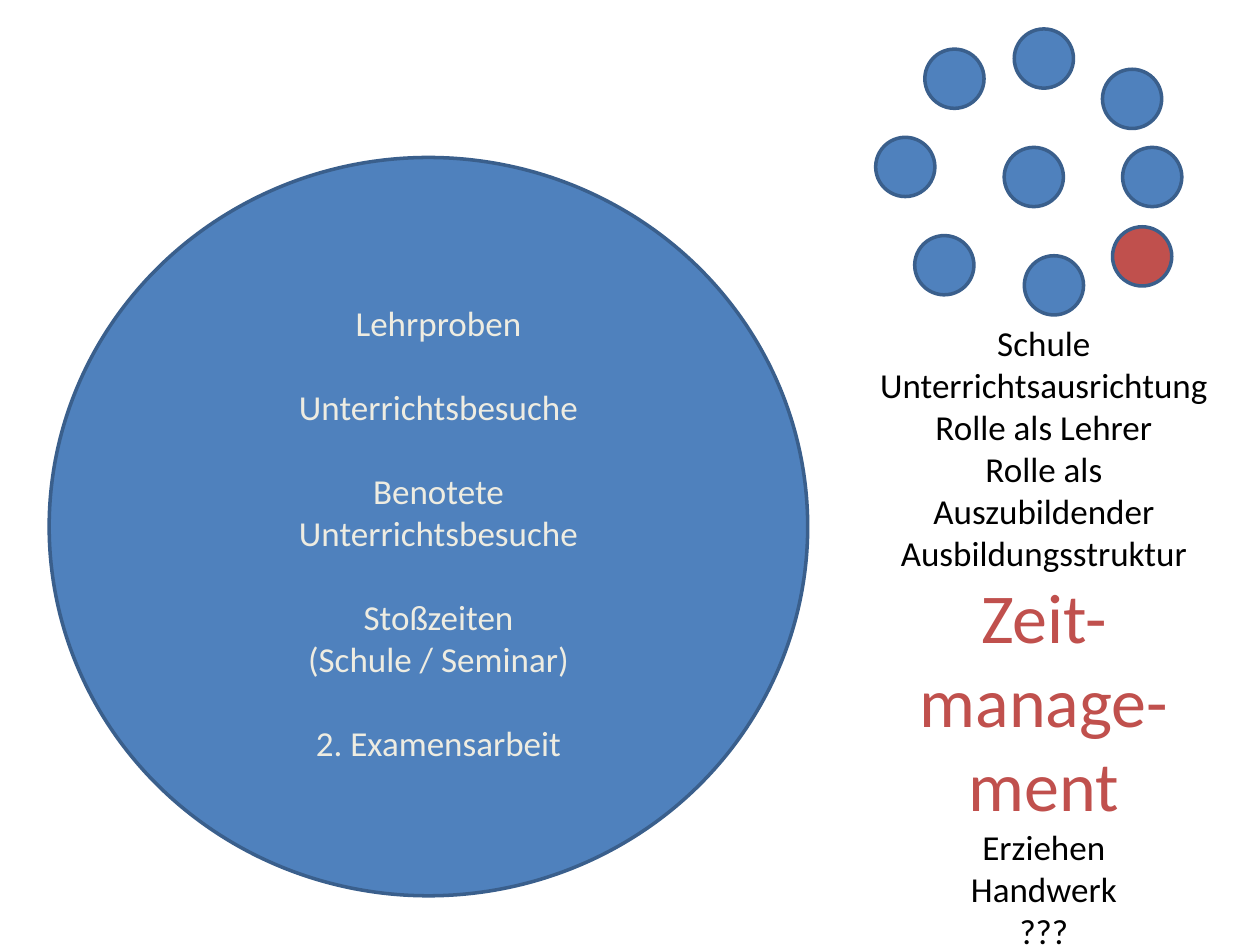
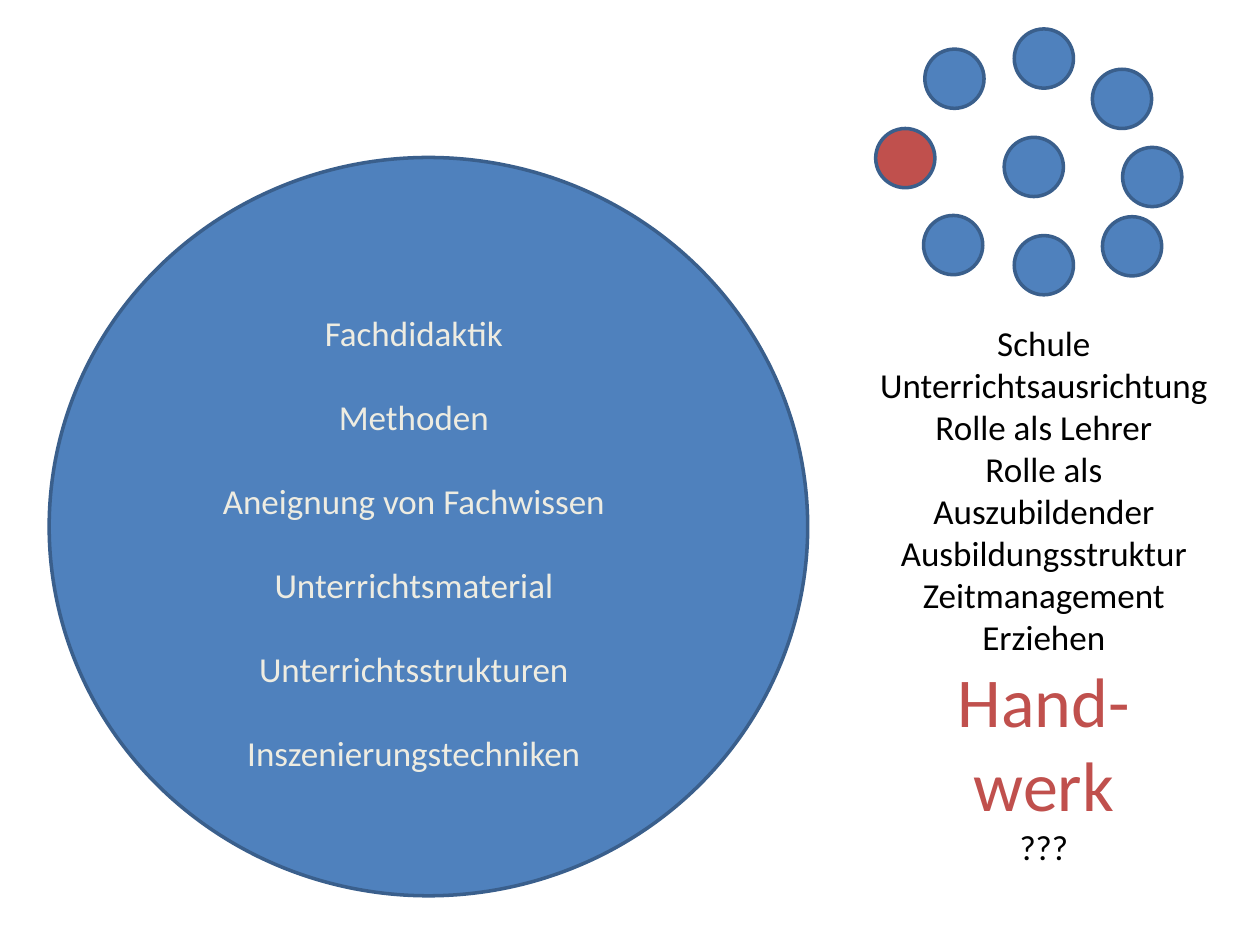
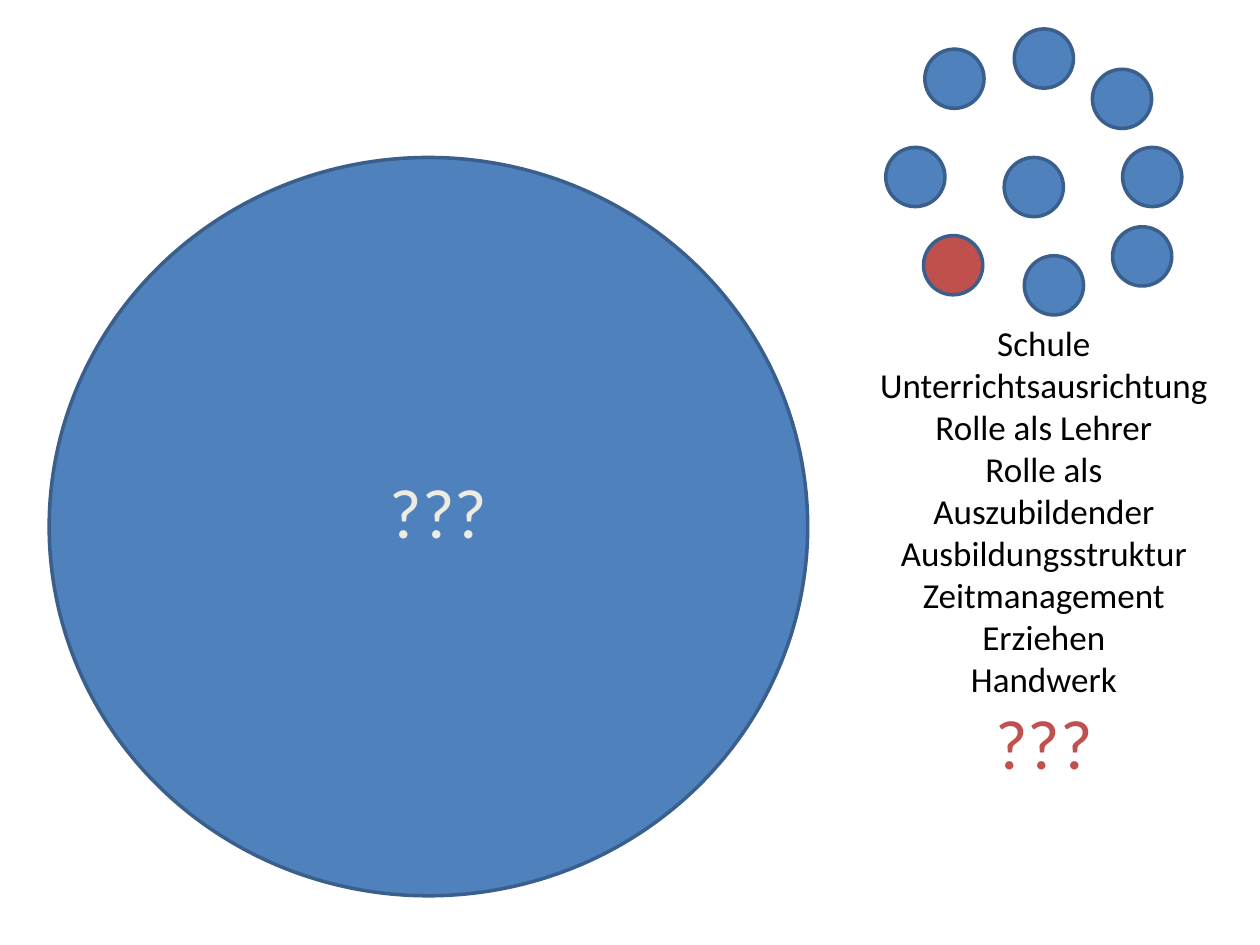
from pptx import Presentation
from pptx import util as u
from pptx.dml.color import RGBColor
from pptx.enum import shapes, text

COLORS = {
    "circle": "4F81BD",
    "outline": "3A5F8C",
    "accent": "C0504D",
    "on_circle": "EEECE1",
    "plain": "000000",
}
FONT = "Calibri"
SMALL, LARGE = 20, 40
LINE_GAP = 24  # points, one line of small text

BIG_CIRCLE = (0.39, 1.25, 6.02, 5.86)
DOT_SIZE = 0.47
DOTS = {
    "centre": (7.97, 1.17),
    "upper left": (7.34, 0.39),
    "left": (6.95, 1.09),
    "lower left": (7.33, 1.87),
    "bottom": (8.13, 2.03),
    "lower right": (8.83, 1.8),
    "right": (8.91, 1.17),
    "upper right": (8.67, 0.55),
    "top": (8.05, 0.23),
}
DOT_ROTATION = {"lower left": 339}

TOPICS = [
    "Schule", "Unterrichtsausrichtung", "Rolle als Lehrer",
    "Rolle als Auszubildender", "Ausbildungsstruktur", "Zeitmanagement",
    "Erziehen", "Handwerk", "???",
]
TOPICS_LEFT, TOPICS_TOP, TOPICS_WIDTH = 6.88, 2.5, 2.81

# Each group of detail lines is set apart from the one before it.
SLIDES = [
    {
        "topic": "Zeitmanagement",
        "emphasis": ["Zeit-manage-ment"],
        "topics_height": 5.45,
        "details": [
            ["Lehrproben"], ["Unterrichtsbesuche"],
            ["Benotete Unterrichtsbesuche"],
            ["Stoßzeiten", "(Schule / Seminar)"], ["2. Examensarbeit"],
        ],
        "details_box": (2.19, 2.34, 2.58, 3.8),
        "details_size": SMALL,
        "active_dot": "lower right",
        "moved_dots": {"lower left": (7.26, 1.87), "upper right": (8.75, 0.55)},
    },
    {
        "topic": "Handwerk",
        "emphasis": ["Hand-", "werk"],
        "topics_height": 4.78,
        "details": [
            ["Fachdidaktik"], ["Methoden"], ["Aneignung von Fachwissen"],
            ["Unterrichtsmaterial"], ["Unterrichtsstrukturen"],
            ["Inszenierungstechniken"],
        ],
        "details_box": (1.02, 2.42, 4.53, 3.8),
        "details_size": SMALL,
        "active_dot": "left",
        "moved_dots": {
            "centre": (7.97, 1.09), "left": (6.95, 1.02),
            "lower left": (7.33, 1.71), "bottom": (8.05, 1.87),
            "lower right": (8.75, 1.72),
        },
    },
    {
        "topic": "???",
        "emphasis": ["???"],
        "topics_height": 4.11,
        "details": [["???"]],
        "details_box": (2.19, 3.67, 2.58, 0.77),
        "details_size": LARGE,
        "active_dot": "lower left",
        "moved_dots": {"centre": (7.97, 1.25), "left": (7.03, 1.17)},
    },
]


def rgb(name):
    return RGBColor.from_string(COLORS[name])


def inches(box):
    return [u.Inches(length) for length in box]


def add_circle(slide, box, color="circle", rotation=0):
    circle = slide.shapes.add_shape(shapes.MSO_SHAPE.OVAL, *inches(box))
    circle.shadow.inherit = False
    circle.fill.solid()
    circle.fill.fore_color.rgb = rgb(color)
    circle.line.color.rgb = rgb("outline")
    circle.line.width = u.Pt(2)
    circle.rotation = rotation


def add_centred_lines(slide, box, lines):
    """Add a text box; each line is (words, size, color, space before)."""
    frame = slide.shapes.add_textbox(*inches(box)).text_frame
    frame.word_wrap = True
    frame.auto_size = text.MSO_AUTO_SIZE.SHAPE_TO_FIT_TEXT
    for number, (words, size, color, gap) in enumerate(lines):
        paragraph = frame.add_paragraph() if number else frame.paragraphs[0]
        paragraph.alignment = text.PP_ALIGN.CENTER
        paragraph.space_before = u.Pt(gap)
        run = paragraph.add_run()
        run.text = words
        for name, value in {"name": FONT, "size": u.Pt(size)}.items():
            setattr(run.font, name, value)
        run.font.color.rgb = rgb(color)


def detail_lines(content):
    return [
        (words, content["details_size"], "on_circle",
         LINE_GAP if group_number and not line_number else 0)
        for group_number, group in enumerate(content["details"])
        for line_number, words in enumerate(group)
    ]


def topic_lines(content):
    lines = []
    for topic in TOPICS:
        if topic == content["topic"]:
            lines += [(part, LARGE, "accent", 0) for part in content["emphasis"]]
        else:
            lines.append((topic, SMALL, "plain", 0))
    return lines


def add_dots(slide, content):
    for name, (left, top) in {**DOTS, **content["moved_dots"]}.items():
        color = "accent" if name == content["active_dot"] else "circle"
        add_circle(slide, (left, top, DOT_SIZE, DOT_SIZE), color,
                   DOT_ROTATION.get(name, 0))


def main():
    presentation = Presentation()
    presentation.slide_width = u.Inches(10)
    presentation.slide_height = u.Inches(7.5)
    blank_layout = presentation.slide_layouts[6]
    for content in SLIDES:
        slide = presentation.slides.add_slide(blank_layout)
        add_circle(slide, BIG_CIRCLE)
        add_centred_lines(slide, content["details_box"], detail_lines(content))
        topics_box = (TOPICS_LEFT, TOPICS_TOP, TOPICS_WIDTH,
                      content["topics_height"])
        add_centred_lines(slide, topics_box, topic_lines(content))
        add_dots(slide, content)
    presentation.save("out.pptx")


if __name__ == "__main__":
    main()
